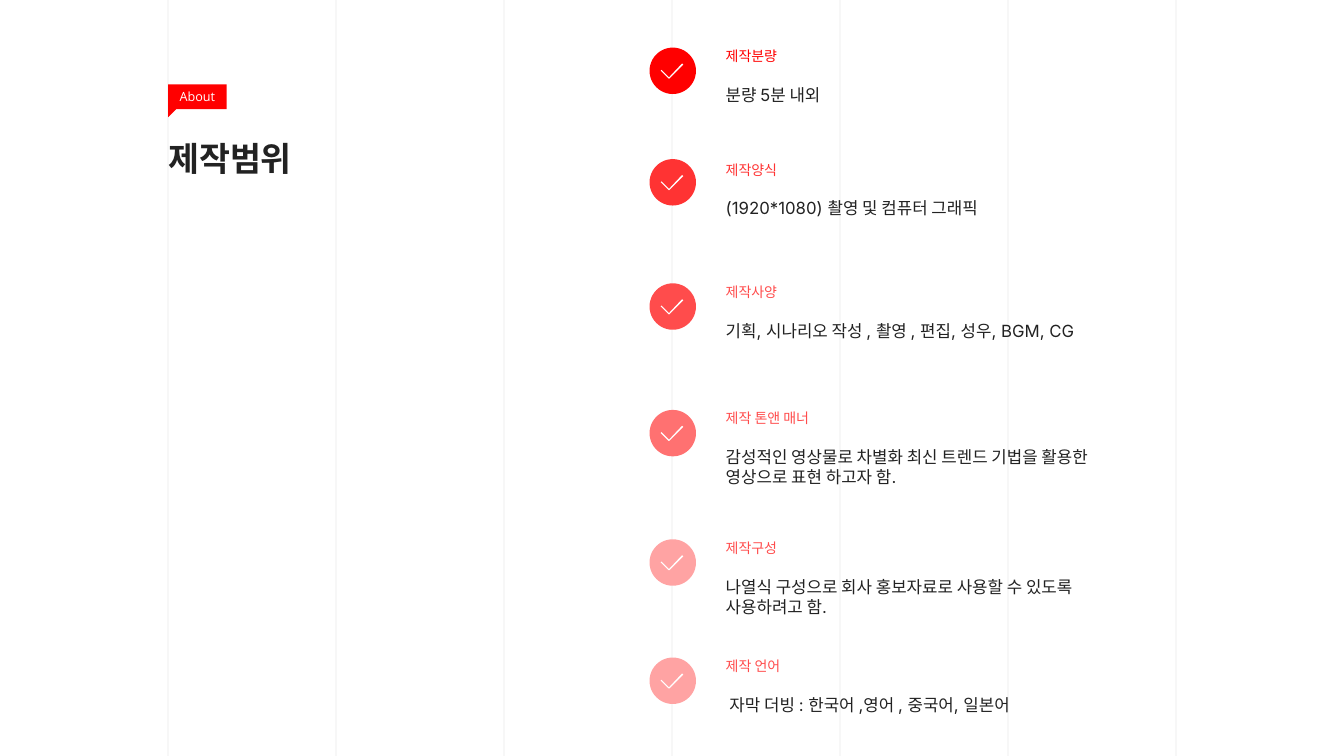
from dataclasses import dataclass

from lxml.etree import SubElement
from pptx import Presentation
from pptx.dml.color import RGBColor
from pptx.enum.shapes import MSO_CONNECTOR, MSO_SHAPE
from pptx.enum.text import MSO_ANCHOR, MSO_AUTO_SIZE, PP_ALIGN
from pptx.oxml.ns import qn
from pptx.util import Cm, Pt

WIDTH, HEIGHT = 33.87, 19.05
COLUMNS = 8
LEFT = 4.24
INK, RED, WHITE = "222222", "FF0000", "FFFFFF"
CIRCLE_LEFT, CIRCLE_SIZE = 16.37, 1.17
TEXT_LEFT, BODY_OFFSET = 18.29, 0.93
# Check mark outline in hundredths of a centimetre
CHECK = [(54, 0), (57, 3), (22, 38), (20, 38), (0, 18), (2, 16), (21, 35)]


@dataclass
class Item:
    heading: str
    body: str
    circle_top: float
    heading_top: float
    circle_color: str
    heading_color: str = "FF4C4C"
    heading_width: float = 1.42
    body_width: float = 9.58
    body_height: float = 0.77


ITEMS = [
    Item("제작분량", "분량 5분 내외", 1.2, 1.07, RED, RED),
    Item("제작양식", "(1920*1080) 촬영 및 컴퓨터 그래픽", 4.01, 3.93, "FF3333", "FF3333",
         body_width=10.41),
    Item("제작사양", "기획, 시나리오 작성 , 촬영 , 편집, 성우, BGM, CG", 7.14, 7.02, "FF4C4C"),
    Item("제작 톤앤 매너", "감성적인 영상물로 차별화 최신 트렌드 기법을 활용한 영상으로 표현 하고자 함.",
         10.33, 10.2, "FF7171", heading_width=2.29, body_height=1.28),
    Item("제작구성", "나열식 구성으로 회사 홍보자료로 사용할 수 있도록 사용하려고 함.",
         13.59, 13.47, "FFA3A3", body_height=1.28),
    Item("제작 언어", " 자막 더빙 : 한국어 ,영어 , 중국어, 일본어", 16.57, 16.44, "FFA3A3",
         heading_width=1.5),
]


def rgb(color: str) -> RGBColor:
    return RGBColor.from_string(color)


def paint(s, color: str):
    s.shadow.inherit = False
    s.fill.solid()
    s.fill.fore_color.rgb = rgb(color)
    s.line.fill.background()
    return s


def add_filled(slide, kind: MSO_SHAPE, x: float, y: float, w: float, h: float, color: str):
    return paint(slide.shapes.add_shape(kind, Cm(x), Cm(y), Cm(w), Cm(h)), color)


def write(tf, text: str, size: float, color: str, font: str = "Inter", bold: bool = False):
    p = tf.paragraphs[0]
    p.text = text
    p.font.name, p.font.size, p.font.bold = font, Pt(size), bold
    p.font.color.rgb = rgb(color)
    return p


def add_text(slide, text: str, x: float, y: float, w: float, h: float, size: float,
             color: str, wrap: bool = True, pad: float = 0.13, bold: bool = False) -> None:
    tf = slide.shapes.add_textbox(Cm(x), Cm(y), Cm(w), Cm(h)).text_frame
    tf.word_wrap = wrap
    tf.auto_size = MSO_AUTO_SIZE.SHAPE_TO_FIT_TEXT if pad else MSO_AUTO_SIZE.NONE
    tf.margin_left = tf.margin_right = 0
    tf.margin_top = tf.margin_bottom = Cm(pad)
    write(tf, text, size, color, bold=bold)


def add_guide(slide, x: float) -> None:
    s = slide.shapes.add_connector(MSO_CONNECTOR.STRAIGHT, Cm(x), 0, Cm(x), Cm(HEIGHT))
    s.line.width = Pt(0.5)
    s.line.color.rgb = rgb(INK)
    color = s.line._ln.find(".//" + qn("a:srgbClr"))
    SubElement(color, qn("a:alpha"), val="10000")
    SubElement(s._element.spPr, qn("a:effectLst"))


def add_item(slide, item: Item) -> None:
    add_filled(slide, MSO_SHAPE.OVAL, CIRCLE_LEFT, item.circle_top, CIRCLE_SIZE,
               CIRCLE_SIZE, item.circle_color)
    check = slide.shapes.build_freeform(*CHECK[0], scale=Cm(0.01))
    check.add_line_segments(CHECK[1:], close=True)
    paint(check.convert_to_shape(Cm(CIRCLE_LEFT + 0.28), Cm(item.circle_top + 0.4)), WHITE)
    add_text(slide, item.heading, TEXT_LEFT, item.heading_top, item.heading_width, 0.68,
             10, item.heading_color, wrap=False)
    add_text(slide, item.body, TEXT_LEFT, item.heading_top + BODY_OFFSET, item.body_width,
             item.body_height, 12, INK)


def main() -> None:
    prs = Presentation()
    prs.slide_width, prs.slide_height = Cm(WIDTH), Cm(HEIGHT)
    slide = prs.slides.add_slide(prs.slide_layouts[6])

    # Column guides
    for i in range(1, COLUMNS):
        add_guide(slide, i * WIDTH / COLUMNS)

    # Title and its tag
    add_text(slide, "제작범위", LEFT, 3.48, 21.21, 2.08, 24, INK, pad=0, bold=True)
    tag = add_filled(slide, MSO_SHAPE.RECTANGLE, LEFT, 2.13, 1.47, 0.62, RED)
    tf = tag.text_frame
    tf.word_wrap = False
    tf.vertical_anchor = MSO_ANCHOR.MIDDLE
    write(tf, "About", 9, WHITE, "Open Sans").alignment = PP_ALIGN.CENTER
    tail = add_filled(slide, MSO_SHAPE.RIGHT_TRIANGLE, LEFT, 2.75, 0.2, 0.2, RED)
    tail.rotation = 90

    # Production scope list
    for item in ITEMS:
        add_item(slide, item)

    prs.save("out.pptx")


if __name__ == "__main__":
    main()
